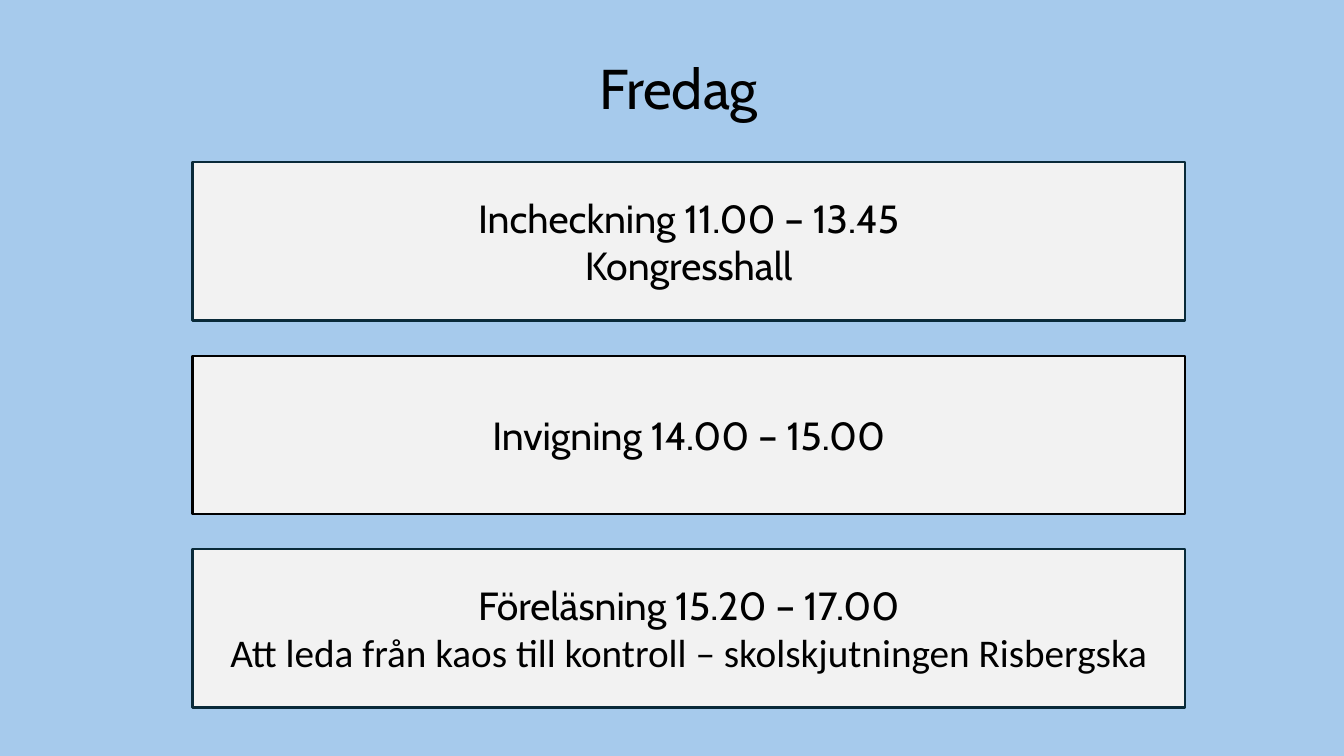
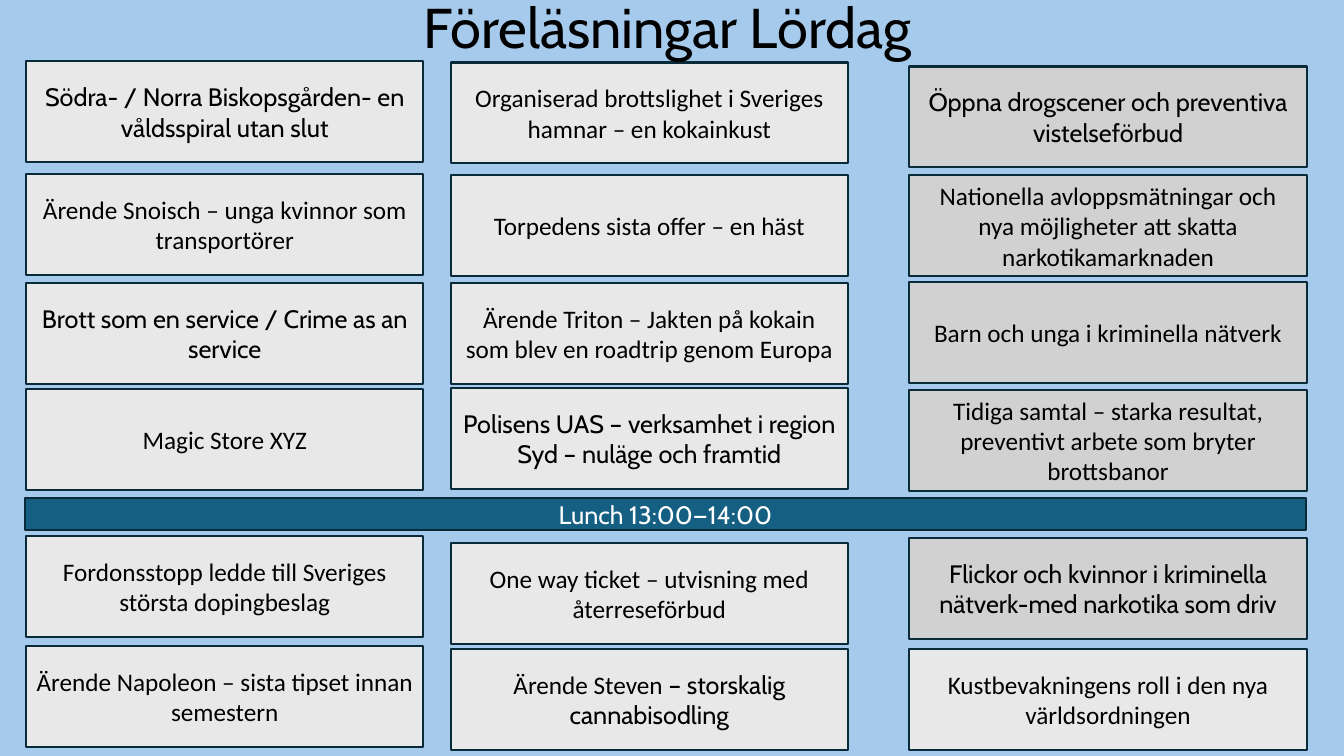
from pptx import Presentation
from pptx.dml.color import RGBColor
from pptx.enum import shapes, text
from pptx.util import Inches, Pt

# Shared look
SKY, INK, WHITE = "A6CAEC", "000000", "FFFFFF"
EDGE, PANEL, LIGHT, GREY, TEAL = "092A39", "F2F2F2", "E8E8E8", "D1D1D1", "156082"
HEADING, BODY = "Cabin", "Calibri"

# Friday: each panel holds lines of (text, font)
FRIDAY_LEFT, FRIDAY_TOP, FRIDAY_STEP = 1.91, 1.61, 1.92
FRIDAY_SIZE = (9.84, 1.57)
FRIDAY = [
    (EDGE, [("Incheckning 11.00 – 13.45", HEADING), ("Kongresshall", HEADING)]),
    (INK, [("Invigning 14.00 – 15.00", HEADING)]),
    (EDGE, [("Föreläsning 15.20 – 17.00", HEADING),
            ("Att leda från kaos till kontroll – skolskjutningen Risbergska", BODY)]),
]

# Saturday: column left -> lectures as (top, fill, font, text)
LECTURE_SIZE = (3.94, 1)
SATURDAY = {
    0.26: [
        (0.61, LIGHT, HEADING, "Södra- / Norra Biskopsgården- en våldsspiral utan slut"),
        (1.73, LIGHT, BODY, "Ärende Snoisch – unga kvinnor som transportörer"),
        (2.81, LIGHT, HEADING, "Brott som en service / Crime as an service"),
        (3.86, LIGHT, BODY, "Magic Store XYZ"),
        (5.32, LIGHT, BODY, "Fordonsstopp ledde till Sveriges största dopingbeslag"),
        (6.41, LIGHT, BODY, "Ärende Napoleon – sista tipset innan semestern"),
    ],
    4.47: [
        (0.62, LIGHT, BODY, "Organiserad brottslighet i Sveriges hamnar – en kokainkust"),
        (1.74, LIGHT, BODY, "Torpedens sista offer – en häst"),
        (2.81, LIGHT, BODY, "Ärende Triton – Jakten på kokain som blev en roadtrip genom Europa"),
        (3.85, LIGHT, HEADING, "Polisens UAS – verksamhet i region Syd – nuläge och framtid"),
        (5.39, LIGHT, BODY, "One way ticket – utvisning med återreseförbud"),
        (6.44, LIGHT, (BODY, HEADING), ("Ärende Steven ", "– storskalig cannabisodling")),
    ],
    9.02: [
        (0.66, GREY, HEADING, "Öppna drogscener och preventiva vistelseförbud"),
        (1.74, GREY, BODY,
         "Nationella avloppsmätningar och nya möjligheter att skatta narkotikamarknaden"),
        (2.80, GREY, BODY, "Barn och unga i kriminella nätverk"),
        (3.87, GREY, BODY,
         "Tidiga samtal – starka resultat, preventivt arbete som bryter brottsbanor"),
        (5.34, GREY, HEADING, "Flickor och kvinnor i kriminella nätverk-med narkotika som driv"),
        (6.44, LIGHT, BODY, "Kustbevakningens roll i den nya världsordningen"),
    ],
}


def color(value):
    return RGBColor.from_string(value)


def write_lines(frame, lines, size, ink=INK):
    """Write centred lines; a line with several fonts has tuples of runs and fonts."""
    frame.word_wrap = True
    for index, (content, font) in enumerate(lines):
        paragraph = frame.paragraphs[0] if index == 0 else frame.add_paragraph()
        paragraph.alignment = text.PP_ALIGN.CENTER
        paragraph.font.size = Pt(size)
        paragraph.font.color.rgb = color(ink)
        if isinstance(content, str):
            paragraph.font.name = font
            paragraph.add_run().text = content
            continue
        for part, name in zip(content, font):
            run = paragraph.add_run()
            run.text = part
            run.font.name = name


def add_title(slide, title, left, top, width):
    box = slide.shapes.add_textbox(Inches(left), Inches(top), Inches(width), Inches(0.77))
    write_lines(box.text_frame, [(title, HEADING)], 40)
    box.text_frame.auto_size = text.MSO_AUTO_SIZE.SHAPE_TO_FIT_TEXT


def add_panel(slide, left, top, size, fill, lines, points=18, edge=EDGE, ink=INK):
    width, height = size
    shape = slide.shapes.add_shape(shapes.MSO_SHAPE.RECTANGLE, Inches(left), Inches(top),
                                   Inches(width), Inches(height))
    shape.shadow.inherit = False
    shape.fill.solid()
    shape.fill.fore_color.rgb = color(fill)
    shape.line.color.rgb = color(edge)
    shape.line.width = Pt(1.5)
    shape.text_frame.vertical_anchor = text.MSO_ANCHOR.MIDDLE
    write_lines(shape.text_frame, lines, points, ink)


def build_friday(slide):
    add_title(slide, "Fredag", 0.44, 0.48, 12.58)
    for row, (edge, lines) in enumerate(FRIDAY):
        add_panel(slide, FRIDAY_LEFT, FRIDAY_TOP + row * FRIDAY_STEP, FRIDAY_SIZE,
                  PANEL, lines, points=28, edge=edge)


def build_saturday(slide):
    for left, lectures in SATURDAY.items():
        for top, fill, font, content in lectures:
            add_panel(slide, left, top, LECTURE_SIZE, fill, [(content, font)])
    # Lunch band between morning and afternoon
    add_panel(slide, 0.25, 4.94, (12.7, 0.32), TEAL, [("Lunch 13:00—14:00", HEADING)], ink=WHITE)
    add_title(slide, "Föreläsningar Lördag", 0.27, -0.12, 12.7)


def main():
    presentation = Presentation()
    presentation.slide_width, presentation.slide_height = Inches(13.33), Inches(7.5)
    background = presentation.slide_master.background.fill
    background.solid()
    background.fore_color.rgb = color(SKY)
    blank = presentation.slide_layouts[6]
    for build in (build_friday, build_saturday):
        build(presentation.slides.add_slide(blank))
    presentation.save("out.pptx")


if __name__ == "__main__":
    main()
